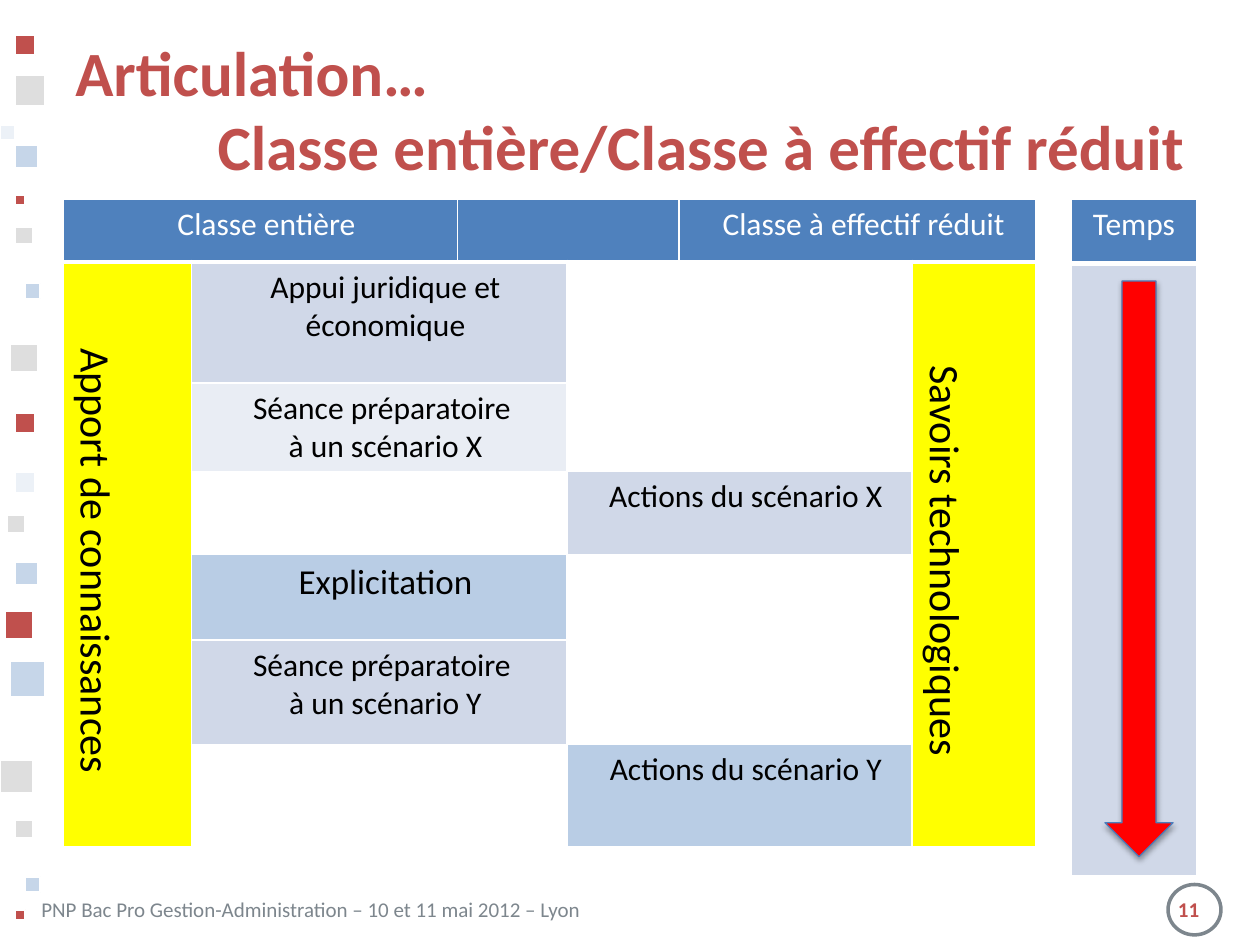
from lxml.etree import SubElement
from pptx import Presentation
from pptx.dml.color import RGBColor
from pptx.enum.shapes import MSO_SHAPE
from pptx.enum.text import MSO_ANCHOR, PP_ALIGN
from pptx.oxml.ns import qn
from pptx.util import Inches, Pt

RED, GREY, BLUE = "C0504D", "7D868D", "4F81BD"
WHITE, BLACK, YELLOW = "FFFFFF", "000000", "FFFF00"
PALE, PALER, SKY = "D0D8E8", "E9EDF4", "B9CDE5"
SILVER, ICE, MIST = ("BFBFBF", 50), ("B8CCE4", 80), ("DBE5F1", 50)
SOLID_RED = (RED, 100)


def color(value):
    return RGBColor.from_string(value)


class SlideBuilder:
    font_name = "Calibri"

    def __init__(self, slide):
        self.slide = slide

    def run(self, paragraph, text, size, tint, bold=False):
        run = paragraph.add_run()
        run.text = text
        run.font.name = self.font_name
        run.font.size = Pt(size)
        run.font.bold = bold
        run.font.color.rgb = color(tint)

    def text(self, box, runs, align=PP_ALIGN.LEFT, anchor=MSO_ANCHOR.MIDDLE, tab=None):
        frame = self.slide.shapes.add_textbox(*map(Inches, box)).text_frame
        frame.word_wrap = True
        frame.vertical_anchor = anchor
        paragraph = frame.paragraphs[0]
        paragraph.alignment = align
        if tab:
            tabs = SubElement(paragraph._p.get_or_add_pPr(), qn("a:tabLst"))
            SubElement(tabs, qn("a:tab"), pos=str(Inches(tab)), algn="l")
        for run in runs:
            self.run(paragraph, *run)

    def shape(self, kind, box, fill, line, width, opacity=100):
        shape = self.slide.shapes.add_shape(kind, *map(Inches, box))
        shape.shadow.inherit = False
        if fill:
            shape.fill.solid()
            shape.fill.fore_color.rgb = color(fill)
            if opacity < 100:
                tint = shape._element.spPr.find(qn("a:solidFill"))[0]
                SubElement(tint, qn("a:alpha"), val=str(opacity * 1000))
        else:
            shape.fill.background()
        shape.line.color.rgb = color(line)
        shape.line.width = Pt(width)
        return shape

    def shadow(self, shape):
        effects = shape._element.spPr.find(qn("a:effectLst"))
        outer = SubElement(effects, qn("a:outerShdw"), blurRad=str(Pt(3.1)),
                           dist=str(Pt(1.8)), dir="5400000", rotWithShape="0")
        tint = SubElement(outer, qn("a:srgbClr"), val=BLACK)
        SubElement(tint, qn("a:alpha"), val="35000")

    def table(self, left, top, columns, rows):
        box = map(Inches, (left, top, sum(columns), sum(rows)))
        table = self.slide.shapes.add_table(len(rows), len(columns), *box).table
        table.first_row = table.horz_banding = False
        for column, width in zip(table.columns, columns):
            column.width = Inches(width)
        for row, height in zip(table.rows, rows):
            row.height = Inches(height)
        return table

    def cell(self, table, row, column, fill, lines=(), span=(1, 1), size=18,
             tint=BLACK, right=0.0, vertical=False):
        height, width = span
        cell = table.cell(row, column)
        if span != (1, 1):
            cell.merge(table.cell(row + height - 1, column + width - 1))
        for r in range(row, row + height):
            for c in range(column, column + width):
                self.paint(table.cell(r, c), fill, 3 if r == 0 else 1)
        cell.margin_right = Inches(right)
        if vertical:
            cell.vertical_anchor = MSO_ANCHOR.MIDDLE
            cell._tc.get_or_add_tcPr().set("vert", "vert")
        frame = cell.text_frame
        for index, line in enumerate(lines):
            paragraph = frame.add_paragraph() if index else frame.paragraphs[0]
            paragraph.alignment = PP_ALIGN.CENTER
            self.run(paragraph, line, size, tint)

    def paint(self, cell, fill, bottom):
        properties = cell._tc.get_or_add_tcPr()
        for side, width in (("L", 1), ("R", 1), ("T", 1), ("B", bottom)):
            line = SubElement(properties, qn(f"a:ln{side}"), w=str(Pt(width)))
            SubElement(SubElement(line, qn("a:solidFill")), qn("a:srgbClr"), val=WHITE)
        cell.fill.solid()
        cell.fill.fore_color.rgb = color(fill)


SQUARES = [
    (0.08, 5.25, 0.28, ICE), (0.12, 1.15, 0.18, ICE), (0, 0.99, 0.12, MIST),
    (0.12, 3.75, 0.16, MIST), (0, 6.03, 0.26, SILVER), (0.12, 3.28, 0.16, SOLID_RED),
    (0.12, 1.8, 0.14, SILVER), (0.08, 2.73, 0.22, SILVER), (0.12, 0.6, 0.24, SILVER),
    (0.06, 4.09, 0.14, SILVER), (0.04, 4.85, 0.22, SOLID_RED), (0.12, 0.28, 0.16, SOLID_RED),
    (0.2, 2.25, 0.12, ICE), (0.12, 4.46, 0.18, ICE), (0.12, 6.51, 0.14, SILVER),
    (0.2, 6.96, 0.12, ICE), (0.12, 7.22, 0.08, SOLID_RED), (0.12, 1.55, 0.08, SOLID_RED),
]

SESSIONS = [
    (1, 1, PALE, ["Appui juridique et économique"], (1, 2), 18),
    (1, 3, WHITE, [], (2, 2), 18),
    (2, 1, PALER, ["Séance préparatoire ", "à un scénario X"], (1, 2), 18),
    (3, 1, WHITE, [], (1, 2), 18),
    (3, 3, PALE, ["Actions du scénario X"], (1, 2), 18),
    (4, 1, SKY, ["Explicitation"], (1, 2), 20),
    (4, 3, WHITE, [], (2, 2), 18),
    (5, 1, PALE, ["Séance préparatoire ", "à un scénario Y"], (1, 2), 18),
    (6, 1, WHITE, [], (1, 2), 18),
    (6, 3, SKY, ["Actions du scénario Y"], (1, 2), 18),
]


def main():
    presentation = Presentation()
    presentation.slide_width = Inches(10)
    presentation.slide_height = Inches(7.5)
    builder = SlideBuilder(presentation.slides.add_slide(presentation.slide_layouts[6]))

    builder.text((0.23, 7.07, 9.58, 0.3), [
        ("PNP Bac Pro Gestion-Administration – 10 et 11 mai 2012 – Lyon \t", 12, GREY),
        ("11", 12, RED, True),
    ], anchor=MSO_ANCHOR.TOP, tab=9.02)
    builder.shape(MSO_SHAPE.OVAL, (9.27, 7.02, 0.42, 0.4), None, GREY, 2)
    for left, top, side, (fill, opacity) in SQUARES:
        builder.shape(MSO_SHAPE.RECTANGLE, (left, top, side, side), fill, WHITE, 1, opacity)

    builder.text((0.5, 0.73, 9, 0.85),
                 [("Classe entière/Classe à effectif réduit", 36, RED, True)], PP_ALIGN.RIGHT)

    schedule = builder.table(0.5, 1.58, [1.02, 2.11, 0.87, 0.89, 1.85, 0.98],
                             [0.5, 0.96, 0.67, 0.66, 0.68, 0.83, 0.81])
    headings = [["Classe entière"], [], ["Classe à effectif réduit"]]
    for index, lines in enumerate(headings):
        builder.cell(schedule, 0, 2 * index, BLUE, lines, (1, 2), tint=WHITE)
    for column, label in ((0, "Apport de connaissances"), (5, "Savoirs technologiques")):
        builder.cell(schedule, 1, column, YELLOW, [label], (6, 1), 24, vertical=True)
    for session in SESSIONS:
        builder.cell(schedule, *session)

    timeline = builder.table(8.5, 1.58, [1], [0.51, 4.86])
    builder.cell(timeline, 0, 0, BLUE, ["Temps"], tint=WHITE, right=0.1)
    builder.cell(timeline, 1, 0, PALE)
    arrow = builder.shape(MSO_SHAPE.DOWN_ARROW, (8.77, 2.23, 0.54, 4.57), "FF0000", "4B7EBC", 0.75)
    builder.shadow(arrow)

    builder.text((0.5, 0.28, 9, 0.57), [("Articulation…", 36, RED, True)])
    presentation.save("out.pptx")


if __name__ == "__main__":
    main()
